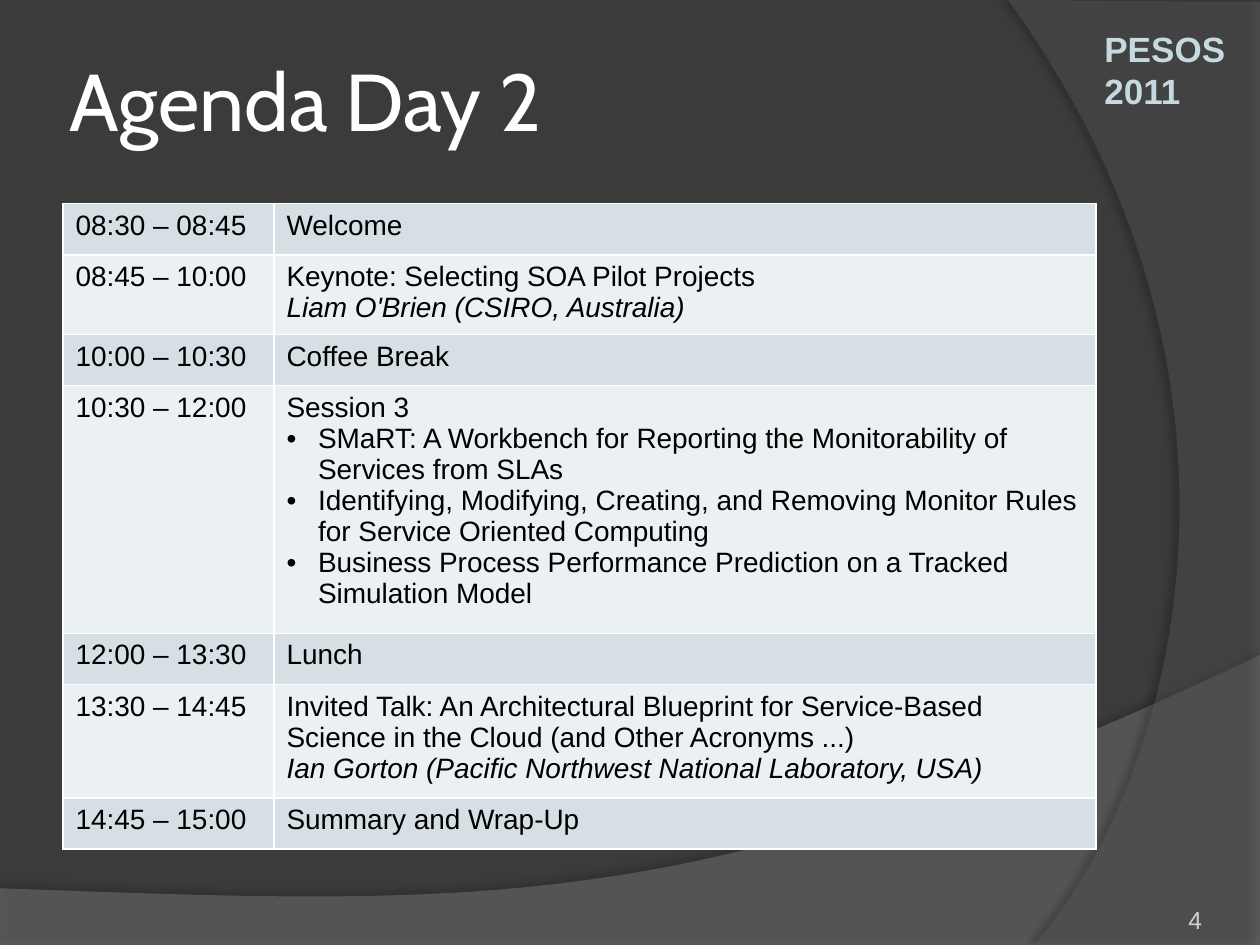
from dataclasses import dataclass

from lxml import etree
from pptx import Presentation
from pptx.dml.color import RGBColor
from pptx.enum.text import MSO_ANCHOR, MSO_AUTO_SIZE
from pptx.oxml.ns import qn
from pptx.util import Inches, Pt

MIDDLE, TOP = MSO_ANCHOR.MIDDLE, MSO_ANCHOR.TOP
GROW, FIXED = MSO_AUTO_SIZE.SHAPE_TO_FIT_TEXT, MSO_AUTO_SIZE.NONE
COLORS = {
    "back": "3B3B3B", "wave": "7F7F7F", "arc": "5E5E5E", "shadow": "000000",
    "event": "C5D9DF", "number": "D4D2D0", "title": "FFFFFF", "ink": "000000",
    "border": "FFFFFF", "odd": "D5DFE4", "even": "EBF0F2",
}
COLS, ROWS = 120, 90
UNIT = Inches(10) // COLS
Point = tuple[float, float]


@dataclass
class Swoosh:
    corners: list[Point]
    curve: tuple[Point, Point, Point]
    color: str
    opacity: int
    shadow_opacity: int
    shadow_distance: float
    shadow_angle: int


@dataclass
class Label:
    text: str
    col: float
    row: float
    cols: float
    rows: float
    size: int
    font: str
    color: str
    bold: bool = False
    anchor: MSO_ANCHOR = TOP
    autosize: MSO_AUTO_SIZE = GROW
    side_inset: float = 0.1


@dataclass
class Slot:
    time: str
    topic: str
    speaker: str = ""
    papers: tuple[str, ...] = ()


SWOOSHES = [
    Swoosh([(0, 84.6), (0, 90), (120, 90), (120, 62.4)],
           ((67.1, 87.5), (46.9, 86.3), (0, 84.6)), "wave", 45, 35, 3.5, 270),
    Swoosh([(120, 0.2), (120, 90), (98.5, 90)],
           ((112.2, 74.3), (122.2, 36), (96, 0)), "arc", 40, 45, 4, 180),
]
LABELS = [
    Label("PESOS 2011", 104, 2, 14, 9.25, 20, "Arial", "event", bold=True),
    Label("4", 112, 85.56, 6, 4, 14, "Arial", "number"),
    Label("Agenda Day 2", 6, 2, 98, 15, 46, "Cabin", "title",
          anchor=MIDDLE, autosize=FIXED, side_inset=0.05),
]
AGENDA = [
    Slot("08:30 – 08:45", "Welcome"),
    Slot("08:45 – 10:00", "Keynote: Selecting SOA Pilot Projects",
         "Liam O'Brien (CSIRO, Australia)"),
    Slot("10:00 – 10:30", "Coffee Break"),
    Slot("10:30 – 12:00", "Session 3", papers=(
        "SMaRT: A Workbench for Reporting the Monitorability of Services from SLAs",
        "Identifying, Modifying, Creating, and Removing Monitor Rules "
        "for Service Oriented Computing",
        "Business Process Performance Prediction on a Tracked Simulation Model")),
    Slot("12:00 – 13:30", "Lunch"),
    Slot("13:30 – 14:45", "Invited Talk: An Architectural Blueprint for Service-Based "
         "Science in the Cloud (and Other Acronyms ...)",
         "Ian Gorton (Pacific Northwest National Laboratory, USA)"),
    Slot("14:45 – 15:00", "Summary and Wrap-Up"),
]


def grid(n: float) -> int:
    return round(n * UNIT)


def rgb(name: str) -> RGBColor:
    return RGBColor.from_string(COLORS[name])


def add(parent, tag: str, **attrs):
    return etree.SubElement(parent, qn(tag), {k: str(v) for k, v in attrs.items()})


def bend_last_side(sp, curve: tuple[Point, Point, Point]) -> None:
    side = list(sp.element.iter(qn("a:lnTo")))[-1]
    bend = etree.Element(qn("a:cubicBezTo"))
    for x, y in curve:
        add(bend, "a:pt", x=grid(x) - sp.left, y=grid(y) - sp.top)
    side.getparent().replace(side, bend)


def draw_swoosh(shapes, swoosh: Swoosh) -> None:
    points = [(grid(x), grid(y)) for x, y in [*swoosh.corners, swoosh.curve[-1]]]
    builder = shapes.build_freeform(*points[0])
    builder.add_line_segments(points[1:], close=True)
    sp = builder.convert_to_shape()
    bend_last_side(sp, swoosh.curve)
    sp.fill.solid()
    sp.fill.fore_color.rgb = rgb(swoosh.color)
    sp.line.fill.background()
    sp.shadow.inherit = False
    props = sp.element.spPr
    color = props.find(qn("a:solidFill")).find(qn("a:srgbClr"))
    add(color, "a:alpha", val=swoosh.opacity * 1000)
    shadow = add(props.find(qn("a:effectLst")), "a:outerShdw", blurRad=Pt(4),
                 dist=Pt(swoosh.shadow_distance), dir=swoosh.shadow_angle * 60000,
                 algn="ctr", rotWithShape=0)
    tint = add(shadow, "a:srgbClr", val=COLORS["shadow"])
    add(tint, "a:alpha", val=swoosh.shadow_opacity * 1000)


def draw_label(shapes, label: Label) -> None:
    sp = shapes.add_textbox(grid(label.col), grid(label.row),
                            grid(label.cols), grid(label.rows))
    tf = sp.text_frame
    tf.word_wrap = True
    tf.auto_size = label.autosize
    tf.vertical_anchor = label.anchor
    tf.margin_left = tf.margin_right = Inches(label.side_inset)
    p = tf.paragraphs[0]
    p.text = label.text
    p.font.size, p.font.name, p.font.bold = Pt(label.size), label.font, label.bold
    p.font.color.rgb = rgb(label.color)


def write_line(p, text: str, italic: bool = False, bullet: bool = False) -> None:
    if bullet:
        props = p._p.get_or_add_pPr()
        props.set("marL", str(Inches(0.25)))
        props.set("indent", str(-Inches(0.25)))
        add(props, "a:buFont", typeface="Arial")
        add(props, "a:buChar", char="•")
    r = p.add_run()
    r.text = text
    r.font.size, r.font.name, r.font.italic = Pt(16), "Arial", italic
    r.font.color.rgb = rgb("ink")


def style_cell(cell, fill: str) -> None:
    props = cell._tc.get_or_add_tcPr()
    for side in ("a:lnL", "a:lnR", "a:lnT", "a:lnB"):
        line = add(props, side, w=Pt(1))
        add(add(line, "a:solidFill"), "a:srgbClr", val=COLORS["border"])
    cell.fill.solid()
    cell.fill.fore_color.rgb = rgb(fill)


def draw_agenda(shapes, slots: list[Slot]) -> None:
    widths, height = (20.1, 78.3), 4.87
    table = shapes.add_table(len(slots), len(widths), grid(6), grid(19.4),
                             grid(sum(widths)), grid(height * len(slots))).table
    for column, width in zip(table.columns, widths):
        column.width = grid(width)
    for i, slot in enumerate(slots):
        table.rows[i].height = grid(height)
        time, content = table.cell(i, 0), table.cell(i, 1)
        for cell in (time, content):
            style_cell(cell, "even" if i % 2 else "odd")
        write_line(time.text_frame.paragraphs[0], slot.time)
        tf = content.text_frame
        write_line(tf.paragraphs[0], slot.topic)
        if slot.speaker:
            write_line(tf.add_paragraph(), slot.speaker, italic=True)
        for paper in slot.papers:
            write_line(tf.add_paragraph(), paper, bullet=True)


def main() -> None:
    prs = Presentation()
    prs.slide_width, prs.slide_height = COLS * UNIT, ROWS * UNIT
    s = prs.slides.add_slide(prs.slide_layouts[6])
    s.background.fill.solid()
    s.background.fill.fore_color.rgb = rgb("back")
    for swoosh in SWOOSHES:
        draw_swoosh(s.shapes, swoosh)
    for label in LABELS:
        draw_label(s.shapes, label)
    draw_agenda(s.shapes, AGENDA)
    prs.save("out.pptx")


if __name__ == "__main__":
    main()
